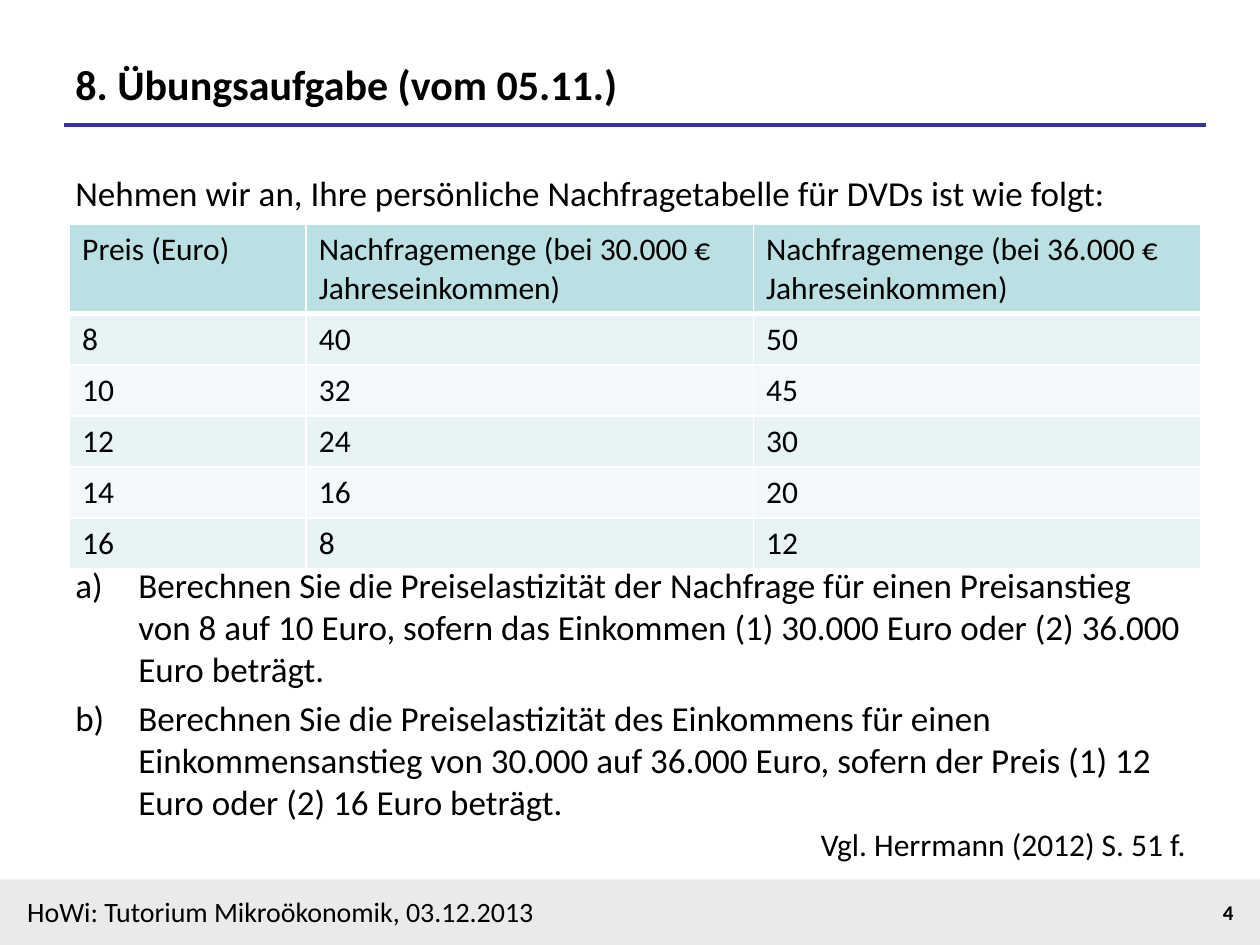
import pptx
import pptx.dml.color
import pptx.enum.shapes
import pptx.enum.text
import pptx.oxml.ns
import pptx.util
from lxml import etree

Pt = pptx.util.Pt
RGB = pptx.dml.color.RGBColor
ALIGN = pptx.enum.text.PP_ALIGN
ANCHOR = pptx.enum.text.MSO_ANCHOR
qn = pptx.oxml.ns.qn

FONT = "Calibri"
BLACK = RGB(0x00, 0x00, 0x00)
WHITE = RGB(0xFF, 0xFF, 0xFF)
RULE_BLUE = RGB(0x33, 0x33, 0x99)
FOOTER_GREY = RGB(0xEA, 0xEA, 0xEA)
HEADER_TEAL = RGB(0xBB, 0xE0, 0xE3)
BANDS = (RGB(0xE7, 0xF3, 0xF4), RGB(0xF3, 0xF9, 0xFA))

DEMAND = [
    ("Preis (Euro)", "Nachfragemenge (bei 30.000 € Jahreseinkommen)",
     "Nachfragemenge (bei 36.000 € Jahreseinkommen)"),
    ("8", "40", "50"),
    ("10", "32", "45"),
    ("12", "24", "30"),
    ("14", "16", "20"),
    ("16", "8", "12"),
]
INTRO = "Nehmen wir an, Ihre persönliche Nachfragetabelle für DVDs ist wie folgt:"
TASKS = [
    "Berechnen Sie die Preiselastizität der Nachfrage für einen Preisanstieg von 8 "
    "auf 10 Euro, sofern das Einkommen (1) 30.000 Euro oder (2) 36.000 Euro beträgt.",
    "Berechnen Sie die Preiselastizität des Einkommens für einen Einkommensanstieg von "
    "30.000 auf 36.000 Euro, sofern der Preis (1) 12 Euro oder (2) 16 Euro beträgt.",
]
TABLE_GAP = 200  # room for the table between the intro and the first task
TASK_GAP = 4


def set_attrs(obj, values):
    for name, value in values.items():
        setattr(obj, name, value)


def write(p, text, size, bold=False, **paragraph_format):
    set_attrs(p, paragraph_format)
    r = p.add_run()
    r.text = text
    set_attrs(r.font, {"name": FONT, "size": Pt(size), "bold": bold})
    r.font.color.rgb = BLACK


def add_textbox(s, box, anchor=ANCHOR.TOP):
    tf = s.shapes.add_textbox(*map(Pt, box)).text_frame
    set_attrs(tf, {"word_wrap": True, "vertical_anchor": anchor})
    return tf


def add_label(s, box, text, size, bold=False, anchor=ANCHOR.TOP, **paragraph_format):
    tf = add_textbox(s, box, anchor)
    write(tf.paragraphs[0], text, size, bold, **paragraph_format)


def add_bar(s, box, color):
    sp = s.shapes.add_shape(pptx.enum.shapes.MSO_SHAPE.RECTANGLE, *map(Pt, box))
    sp.shadow.inherit = False
    sp.fill.solid()
    sp.fill.fore_color.rgb = color
    sp.line.fill.background()


def add_rule(s, ends, color, width):
    line = s.shapes.add_connector(pptx.enum.shapes.MSO_CONNECTOR.STRAIGHT, *map(Pt, ends))
    line.line.color.rgb = color
    line.line.width = Pt(width)
    etree.SubElement(line._element.spPr, qn("a:effectLst"))


def number_paragraph(p):
    """Letter the paragraph a), b), ... with a hanging indent."""
    pPr = p._p.get_or_add_pPr()
    indent = Pt(36)
    pPr.set("marL", str(indent))
    pPr.set("indent", str(-indent))
    etree.SubElement(pPr, qn("a:buFont")).set("typeface", "+mj-lt")
    etree.SubElement(pPr, qn("a:buAutoNum")).set("type", "alphaLcParenR")


def add_body(s, box):
    tf = add_textbox(s, box)
    write(tf.paragraphs[0], INTRO, 20)
    for gap, task in zip((TABLE_GAP, TASK_GAP), TASKS):
        p = tf.add_paragraph()
        write(p, task, 20, space_before=Pt(gap))
        number_paragraph(p)


def set_borders(cell, widths):
    tcPr = cell._tc.get_or_add_tcPr()
    for i, (side, width) in enumerate(widths.items()):
        ln = etree.Element(qn("a:ln" + side), w=str(Pt(width)))
        fill = etree.SubElement(ln, qn("a:solidFill"))
        etree.SubElement(fill, qn("a:srgbClr")).set("val", str(WHITE))
        tcPr.insert(i, ln)


def add_table(s, left, top, widths, heights):
    box = (left, top, sum(widths), sum(heights))
    table = s.shapes.add_table(len(heights), len(widths), *map(Pt, box)).table
    for column, width in zip(table.columns, widths):
        column.width = Pt(width)
    for i, (row, values) in enumerate(zip(table.rows, DEMAND)):
        row.height = Pt(heights[i])
        for cell, value in zip(row.cells, values):
            write(cell.text_frame.paragraphs[0], value, 18)
            cell.fill.solid()
            cell.fill.fore_color.rgb = BANDS[(i - 1) % 2] if i else HEADER_TEAL
            set_borders(cell, {"L": 1, "R": 1, "T": 3 if i == 1 else 1,
                               "B": 1 if i else 3})


def main():
    prs = pptx.Presentation()
    set_attrs(prs, {"slide_width": Pt(720), "slide_height": Pt(540)})
    s = prs.slides.add_slide(prs.slide_layouts[6])

    # Footer
    add_bar(s, (0, 502.5, 720, 37.5), FOOTER_GREY)
    add_label(s, (8.5, 507.5, 549, 27), "HoWi: Tutorium Mikroökonomik, 03.12.2013", 16)
    add_label(s, (598, 510.5, 114, 22), "4", 12, bold=True, alignment=ALIGN.RIGHT)

    # Title and rule
    add_rule(s, (36.7, 71.3, 689, 71.3), RULE_BLUE, 2.25)
    add_label(s, (36, 15, 648, 51), "8. Übungsaufgabe (vom 05.11.)", 24,
              bold=True, anchor=ANCHOR.BOTTOM)

    # Exercise, demand table and reference
    add_body(s, (36, 94.3, 648, 388))
    add_table(s, 39.8, 128.3, (135.2, 255.6, 255.6), [51] + [29.2] * 5)
    add_label(s, (462, 468, 244, 29), "Vgl. Herrmann (2012) S. 51 f.", 18)

    prs.save("out.pptx")


if __name__ == "__main__":
    main()
